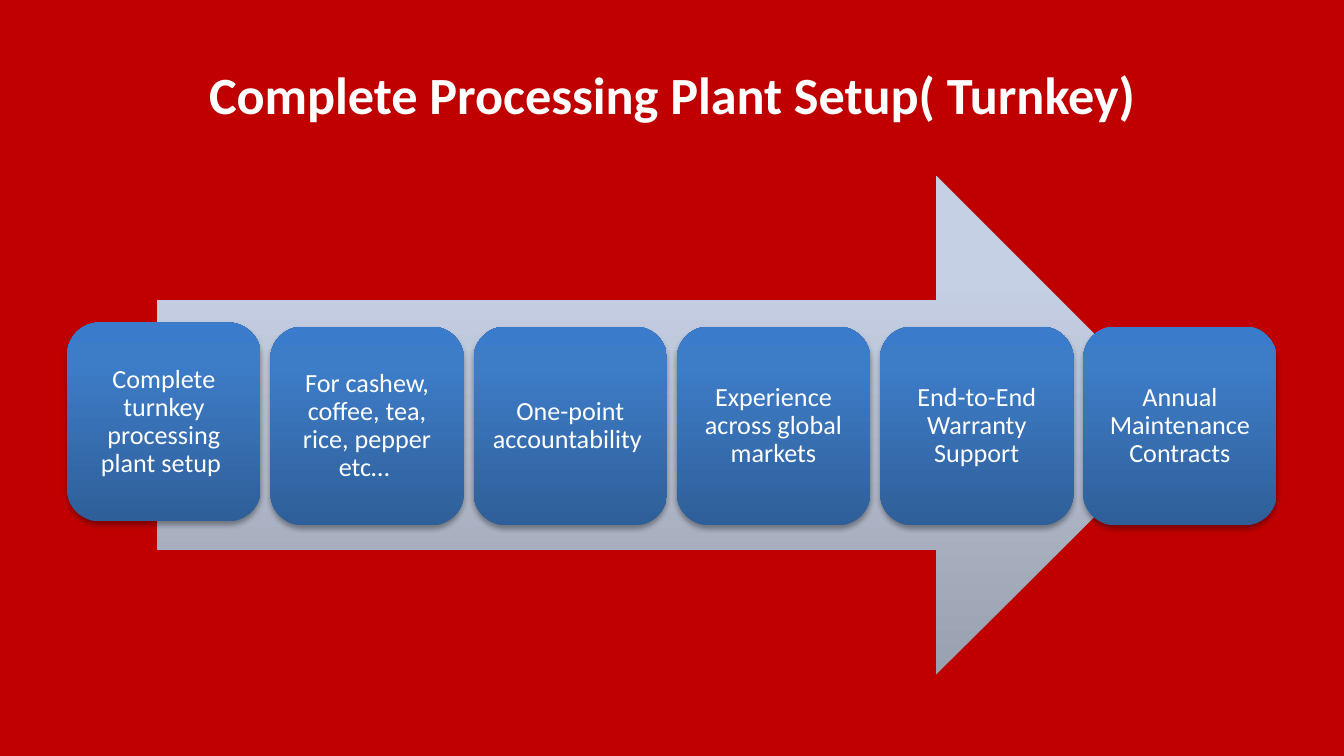
"""Build the turnkey plant setup slide: six steps on a broad arrow."""
from dataclasses import dataclass

from pptx import Presentation
from pptx.dml.color import RGBColor
from pptx.enum.shapes import MSO_SHAPE
from pptx.enum.text import MSO_ANCHOR, PP_ALIGN
from pptx.oxml import parse_xml
from pptx.oxml.ns import nsdecls, qn
from pptx.util import Inches, Pt

ARROW = MSO_SHAPE.RIGHT_ARROW
ROUND = MSO_SHAPE.ROUNDED_RECTANGLE
MIDDLE = MSO_ANCHOR.MIDDLE
CENTER = PP_ALIGN.CENTER


@dataclass(frozen=True)
class Theme:
    back: str = "C00000"
    text: str = "FFFFFF"
    font: str = "Calibri"
    head: int = 28
    body: int = 14
    arrow: tuple = ((0, "99A0AF"), (80, "C6D0E4"), (100, "C7D1E5"))
    step: tuple = ((0, "2F5F99"), (80, "3D7CC7"), (100, "3A7CCB"))


@dataclass(frozen=True)
class Box:
    left: float
    top: float
    width: float
    height: float

    def place(self) -> list:
        return [Inches(n) for n in (self.left, self.top, self.width, self.height)]


@dataclass(frozen=True)
class Step:
    text: str
    top: float = 2.43


THEME = Theme()
TITLE = Box(0.5, 0.23, 9, 0.94)
BAND = Box(1.17, 1.31, 7.65, 3.71)
FIRST, LAST = 0.5, 8.06
WIDTH, HEIGHT = 1.44, 1.48
STEPS = (
    Step("Complete turnkey processing plant setup ", 2.4),
    Step("For cashew, coffee, tea, rice, pepper etc… "),
    Step("One-point accountability "),
    Step("Experience across global markets"),
    Step("End-to-End Warranty Support"),
    Step("Annual Maintenance Contracts"),
)


def write(shape, text: str, size: int, bold: bool, inset: float, lead: float) -> None:
    """Set centred text in a shape."""
    frame = shape.text_frame
    edge = Inches(inset)
    form = {"word_wrap": True, "vertical_anchor": MIDDLE, "margin_left": edge,
            "margin_right": edge, "margin_top": edge, "margin_bottom": edge}
    for name, value in form.items():
        setattr(frame, name, value)
    para = frame.paragraphs[0]
    para.alignment = CENTER
    para.line_spacing = lead
    run = para.add_run()
    run.text = text
    for name, value in {"name": THEME.font, "size": Pt(size), "bold": bold}.items():
        setattr(run.font, name, value)
    run.font.color.rgb = RGBColor.from_string(THEME.text)


def draw(slide, kind, box: Box, stops: tuple):
    """Add an unlined shape with a vertical gradient."""
    shape = slide.shapes.add_shape(kind, *box.place())
    shape.shadow.inherit = False
    shape.line.fill.background()
    shape.fill.gradient()
    shape.fill.gradient_angle = 90
    marks = "".join(f'<a:gs pos="{pos * 1000}"><a:srgbClr val="{hue}"/></a:gs>'
                    for pos, hue in stops)
    grad = shape._element.spPr.find(qn("a:gradFill"))
    grad.replace(grad.find(qn("a:gsLst")),
                 parse_xml(f'<a:gsLst {nsdecls("a")}>{marks}</a:gsLst>'))
    return shape


def shade(shape) -> None:
    """Add a soft shadow below a shape."""
    shape._element.spPr.find(qn("a:effectLst")).append(parse_xml(
        f'<a:outerShdw {nsdecls("a")} blurRad="{Pt(3.1)}" dist="{Pt(1.8)}" '
        'dir="5400000" rotWithShape="0"><a:srgbClr val="000000">'
        '<a:alpha val="35000"/></a:srgbClr></a:outerShdw>'))


def main() -> None:
    """Build and save the slide."""
    deck = Presentation()
    deck.slide_width = Inches(10)
    deck.slide_height = Inches(10 * 9 / 16)
    slide = deck.slides.add_slide(deck.slide_layouts[6])
    fill = slide.background.fill
    fill.solid()
    fill.fore_color.rgb = RGBColor.from_string(THEME.back)
    title = slide.shapes.add_textbox(*TITLE.place())
    write(title, "Complete Processing Plant Setup( Turnkey)", THEME.head, True, 0.05, 1.0)
    draw(slide, ARROW, BAND, THEME.arrow)
    pitch = (LAST - FIRST) / (len(STEPS) - 1)
    for index, step in enumerate(STEPS):
        box = Box(FIRST + index * pitch, step.top, WIDTH, HEIGHT)
        shape = draw(slide, ROUND, box, THEME.step)
        shade(shape)
        write(shape, step.text, THEME.body, False, 0.06, 0.9)
    deck.save("out.pptx")


if __name__ == "__main__":
    main()
